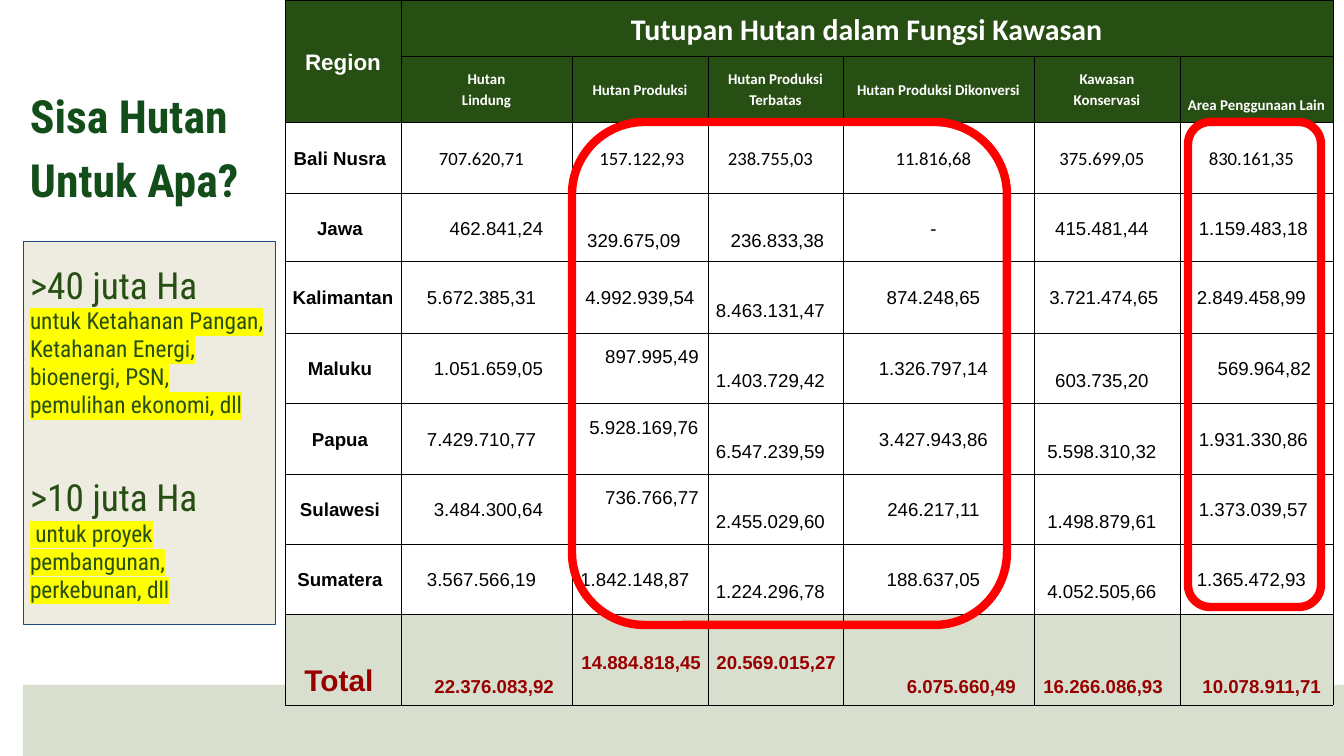
from dataclasses import dataclass

from lxml.etree import SubElement
from pptx import Presentation
from pptx.dml.color import RGBColor
from pptx.enum.shapes import MSO_SHAPE
from pptx.enum.text import MSO_ANCHOR, PP_ALIGN
from pptx.oxml import parse_xml
from pptx.oxml.ns import nsdecls, qn
from pptx.util import Pt


@dataclass(frozen=True)
class Theme:
    heading: str = "134E1A"
    green: str = "274E13"
    sage: str = "D9DFCE"
    cream: str = "EEECE1"
    navy: str = "1F497D"
    white: str = "FFFFFF"
    black: str = "000000"
    maroon: str = "980000"
    red: str = "FF0000"
    yellow: str = "FFFF00"
    condensed: str = "Roboto Condensed"
    sans: str = "Arial"
    humanist: str = "Calibri"
    heading_size: int = 49
    figure_size: int = 40
    large_size: int = 32
    note_size: int = 25
    region_size: int = 24
    body_size: int = 20
    label_size: int = 16


THEME = Theme()
MARGIN = 7
COLUMNS = [116, 171, 136, 135, 191, 146, 153]
ROWS = [56, 66, 71, 68, 72, 70, 71, 70, 70, 91]
LABELS = [["Hutan", "Lindung"], ["Hutan Produksi"], ["Hutan Produksi Terbatas"],
          ["Hutan Produksi Dikonversi"], ["Kawasan", "Konservasi"], ["Area Penggunaan Lain"]]
REGIONS = {
    "Bali Nusra": "707.620,71 157.122,93 238.755,03 11.816,68 375.699,05 830.161,35",
    "Jawa": "462.841,24 329.675,09 236.833,38 - 415.481,44 1.159.483,18",
    "Kalimantan": "5.672.385,31 4.992.939,54 8.463.131,47 874.248,65 3.721.474,65 2.849.458,99",
    "Maluku": "1.051.659,05 897.995,49 1.403.729,42 1.326.797,14 603.735,20 569.964,82",
    "Papua": "7.429.710,77 5.928.169,76 6.547.239,59 3.427.943,86 5.598.310,32 1.931.330,86",
    "Sulawesi": "3.484.300,64 736.766,77 2.455.029,60 246.217,11 1.498.879,61 1.373.039,57",
    "Sumatera": "3.567.566,19 1.842.148,87 1.224.296,78 188.637,05 4.052.505,66 1.365.472,93",
}
TOTALS = "22.376.083,92 14.884.818,45 20.569.015,27 6.075.660,49 16.266.086,93 10.078.911,71"
# Shift (right, down) of a figure from the middle of its cell, by region and column
USUAL_SHIFT = (-5, 0)
LOW = (-5, 12)
SHIFTS = {
    "Bali Nusra": {2: (2, 0)},
    "Jawa": {1: (10, 0), 2: (-6, 12), 3: (2, 12), 6: (-3, 0)},
    "Kalimantan": {2: (0, 0), 3: LOW, 5: (-3, 0)},
    "Maluku": {1: (2, 0), 2: (12, -12), 3: LOW, 5: LOW, 6: (8, 0)},
    "Papua": {2: (4, -12), 3: LOW, 5: LOW, 6: (-3, 0)},
    "Sulawesi": {1: (2, 0), 2: (12, -12), 3: LOW, 5: LOW, 6: (-3, 0)},
    "Sumatera": {3: LOW, 5: LOW},
}
# Right and bottom margins of the totals
TOTAL_MARGINS = [(18, 7), (7, 31), (7, 31), (18, 7), (17, 7), (12, 7)]


def px(length):
    return round(length * 914400 / 67.2)


def colour(code):
    return RGBColor.from_string(code)


def add_span(para, text, size, font, ink, bold=False, highlight=None):
    span = para.add_run()
    span.text = text
    span.font.size = Pt(size)
    span.font.bold = bold
    span.font.color.rgb = colour(ink)
    if highlight:
        mark = SubElement(span.font._element, qn("a:highlight"))
        SubElement(mark, qn("a:srgbClr")).set("val", highlight)
    span.font.name = font


def add_box(page, preset, box, fill=None, line=None, weight=0.75):
    shape = page.shapes.add_shape(preset, *map(px, box))
    shape.shadow.inherit = False
    if fill:
        shape.fill.solid()
        shape.fill.fore_color.rgb = colour(fill)
    else:
        shape.fill.background()
    if line:
        shape.line.color.rgb = colour(line)
        shape.line.width = Pt(weight)
    else:
        shape.line.fill.background()
    return shape


def set_margins(frame, left, top, right, bottom):
    frame.margin_left, frame.margin_top = px(left), px(top)
    frame.margin_right, frame.margin_bottom = px(right), px(bottom)


def add_heading(page, box):
    frame = page.shapes.add_textbox(*map(px, box)).text_frame
    frame.word_wrap = True
    set_margins(frame, 0, 0, 0, 0)
    para = frame.paragraphs[0]
    para.line_spacing = 1.16
    add_span(para, "Sisa Hutan Untuk Apa?", THEME.heading_size, THEME.condensed,
             THEME.heading, bold=True)


def add_panel(page, box):
    panel = add_box(page, MSO_SHAPE.FLOWCHART_PROCESS, box, THEME.cream, THEME.navy)
    frame = panel.text_frame
    frame.word_wrap = True
    frame.vertical_anchor = MSO_ANCHOR.MIDDLE
    set_margins(frame, *[MARGIN] * 4)
    claims = [
        (">40 juta Ha", "untuk Ketahanan Pangan, Ketahanan Energi, bioenergi, PSN, "
                        "pemulihan ekonomi, dll"),
        (">10 juta Ha", " untuk proyek pembangunan, perkebunan, dll"),
    ]
    for index, (figure, purpose) in enumerate(claims):
        para = frame.add_paragraph() if index else frame.paragraphs[0]
        if index:
            para.space_before = Pt(60)
        para.alignment = PP_ALIGN.LEFT
        add_span(para, figure, THEME.figure_size, THEME.condensed, THEME.green)
        para = frame.add_paragraph()
        para.alignment = PP_ALIGN.LEFT
        add_span(para, purpose, THEME.note_size, THEME.condensed, THEME.green,
                 highlight=THEME.yellow)


def style_cell(cell, fill):
    cell.fill.solid()
    cell.fill.fore_color.rgb = colour(fill)
    for index, side in enumerate(("lnL", "lnR", "lnT", "lnB")):
        border = parse_xml(
            f'<a:{side} {nsdecls("a")} w="9525"><a:solidFill>'
            f'<a:srgbClr val="{THEME.black}"/></a:solidFill></a:{side}>')
        cell._tc.get_or_add_tcPr().insert(index, border)


def write_cell(cell, lines, size, font, ink, bold=True, anchor=MSO_ANCHOR.MIDDLE,
               align=PP_ALIGN.CENTER, shift=(0, 0)):
    right, down = shift
    set_margins(cell, MARGIN + max(0, 2 * right), MARGIN + max(0, 2 * down),
                MARGIN + max(0, -2 * right), MARGIN + max(0, -2 * down))
    cell.vertical_anchor = anchor
    for index, line in enumerate(lines):
        para = cell.text_frame.add_paragraph() if index else cell.text_frame.paragraphs[0]
        para.alignment = align
        para.line_spacing = 1.15
        add_span(para, line, size, font, ink, bold)


def add_forest_table(page, left, top):
    table = page.shapes.add_table(len(ROWS), len(COLUMNS), px(left), px(top),
                                  px(sum(COLUMNS)), px(sum(ROWS))).table
    for column, width in zip(table.columns, COLUMNS):
        column.width = px(width)
    fills = [THEME.green] * 2 + [THEME.white] * len(REGIONS) + [THEME.sage]
    for row, height, fill in zip(table.rows, ROWS, fills):
        row.height = px(height)
        for cell in row.cells:
            style_cell(cell, fill)

    table.cell(0, 0).merge(table.cell(1, 0))
    table.cell(0, 1).merge(table.cell(0, len(COLUMNS) - 1))
    write_cell(table.cell(0, 0), ["Region"], THEME.region_size, THEME.sans, THEME.white)
    write_cell(table.cell(0, 1), ["Tutupan Hutan dalam Fungsi Kawasan"], THEME.large_size,
               THEME.humanist, THEME.white, anchor=MSO_ANCHOR.BOTTOM)
    for column, lines in enumerate(LABELS, 1):
        anchor = MSO_ANCHOR.BOTTOM if column == len(LABELS) else MSO_ANCHOR.MIDDLE
        write_cell(table.cell(1, column), lines, THEME.label_size, THEME.humanist,
                   THEME.white, anchor=anchor)

    for row, (region, figures) in enumerate(REGIONS.items(), 2):
        write_cell(table.cell(row, 0), [region], THEME.body_size, THEME.sans, THEME.black,
                   shift=(0 if region == "Kalimantan" else -3, 0))
        font = THEME.humanist if region == "Bali Nusra" else THEME.sans
        for column, figure in enumerate(figures.split(), 1):
            write_cell(table.cell(row, column), [figure], THEME.body_size, font, THEME.black,
                       bold=False, shift=SHIFTS[region].get(column, USUAL_SHIFT))

    last = len(ROWS) - 1
    write_cell(table.cell(last, 0), ["Total"], THEME.large_size, THEME.sans, THEME.maroon,
               anchor=MSO_ANCHOR.BOTTOM, shift=(-4, 0))
    for column, (total, (right, bottom)) in enumerate(zip(TOTALS.split(), TOTAL_MARGINS), 1):
        cell = table.cell(last, column)
        write_cell(cell, [total], THEME.body_size, THEME.sans, THEME.maroon,
                   anchor=MSO_ANCHOR.BOTTOM, align=PP_ALIGN.RIGHT)
        set_margins(cell, MARGIN, MARGIN, right, bottom)


def main():
    deck = Presentation()
    deck.slide_width, deck.slide_height = px(1344), px(756)
    page = deck.slides.add_slide(deck.slide_layouts[6])
    add_box(page, MSO_SHAPE.RECTANGLE, (23, 685, 1344, 76), THEME.sage)
    add_heading(page, (30, 79, 286, 128))
    add_forest_table(page, 285, 0)
    add_panel(page, (23, 241, 252, 383))
    for box in ((572, 122, 435, 503), (1188, 122, 133, 485)):
        add_box(page, MSO_SHAPE.ROUNDED_RECTANGLE, box, line=THEME.red, weight=9)
    deck.save("out.pptx")


if __name__ == "__main__":
    main()
